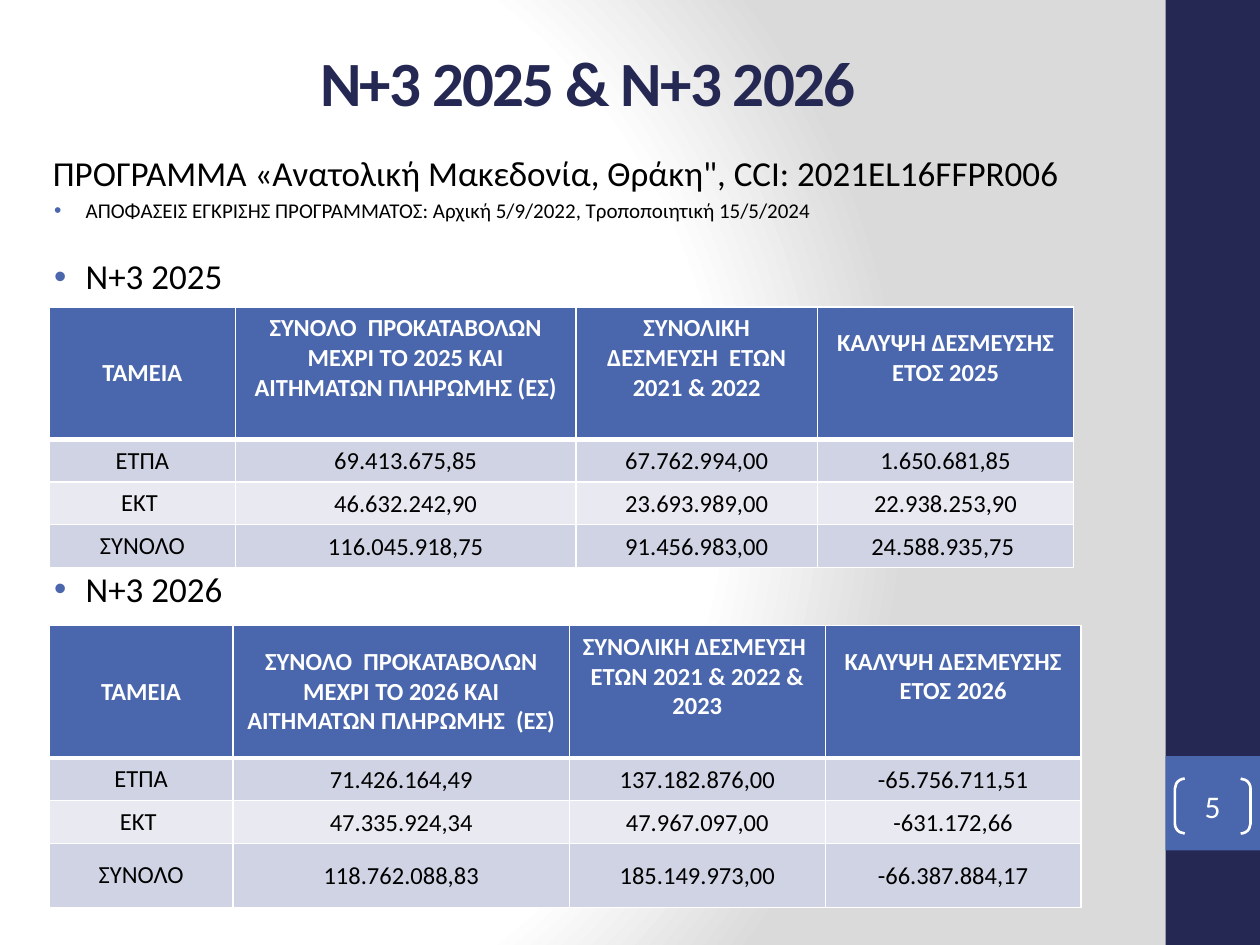
import dataclasses

import pptx
import pptx.dml.color
import pptx.enum.shapes
import pptx.enum.text
import pptx.oxml
import pptx.oxml.ns
import pptx.util

ALIGN = pptx.enum.text.PP_ALIGN
ANCHOR = pptx.enum.text.MSO_ANCHOR
SHAPE = pptx.enum.shapes.MSO_SHAPE
NS = pptx.oxml.ns.nsdecls("a", "p")


@dataclasses.dataclass(frozen=True)
class Theme:
    font: str = "Calibri"
    navy: str = "242852"
    blue: str = "4A66AC"
    band: str = "D0D3E3"
    pale: str = "E9EAF1"
    white: str = "FFFFFF"
    grey: str = "DADADA"
    black: str = "000000"
    title: int = 36
    lead: int = 20
    number: int = 18
    cell: int = 14
    note: int = 12


THEME = Theme()


@dataclasses.dataclass(frozen=True)
class Box:
    """A region in percent of the slide's width and height."""
    left: float
    top: float
    width: float
    height: float

    def lengths(self):
        return [pptx.util.Inches(share * side / 100) for share, side in
                ((self.left, 10), (self.top, 7.5), (self.width, 10), (self.height, 7.5))]

    def inner(self, left, top, width, height):
        """A box inside this one, in shares of its sides."""
        return Box(self.left + left * self.width, self.top + top * self.height,
                   width * self.width, height * self.height)


def rgb(color):
    return pptx.dml.color.RGBColor.from_string(color)


def write(para, text, size, color=THEME.black, bold=False, align=None, spacing=None):
    para.alignment = align
    span = para.add_run()
    span.text = text
    font = span.font
    font.name, font.size, font.bold = THEME.font, pptx.util.Pt(size), bold
    font.color.rgb = rgb(color)
    if spacing is not None:
        span._r.get_or_add_rPr().set("spc", str(spacing * 100))


def place(shape, box):
    shape.left, shape.top, shape.width, shape.height = box.lengths()


def set_background(page):
    stops = "".join(
        f'<a:gs pos="{pos}000"><a:srgbClr val="{color}"/></a:gs>'
        for pos, color in ((0, THEME.white), (75, THEME.white), (100, THEME.grey)))
    page._element.cSld.insert(0, pptx.oxml.parse_xml(
        f'<p:bg {NS}><p:bgPr><a:gradFill rotWithShape="1"><a:gsLst>{stops}</a:gsLst>'
        '<a:path path="circle"><a:fillToRect l="20000" t="50000" r="100000" b="50000"/>'
        '</a:path></a:gradFill><a:effectLst/></p:bgPr></p:bg>'))


def add_block(page, box, color):
    block = page.shapes.add_shape(SHAPE.RECTANGLE, *box.lengths())
    block.shadow.inherit = False
    block.fill.solid()
    block.fill.fore_color.rgb = rgb(color)
    block.line.fill.background()


def add_side_bar(page, box, number):
    add_block(page, box, THEME.navy)
    tile = box.inner(0, 0.8, 1, 0.1)
    add_block(page, tile, THEME.blue)
    # Page number between brackets
    bracket = page.shapes.add_shape(
        SHAPE.DOUBLE_BRACKET, *tile.inner(0.1, 0.24, 0.8, 0.58).lengths())
    bracket.adjustments[0] = 0.18
    bracket.shadow.inherit = False
    bracket.fill.background()
    bracket.line.color.rgb = rgb(THEME.white)
    bracket.line.width = pptx.util.Pt(1.5)
    frame = bracket.text_frame
    frame.margin_left = frame.margin_right = frame.margin_top = frame.margin_bottom = 0
    frame.vertical_anchor = ANCHOR.MIDDLE
    write(frame.paragraphs[0], number, THEME.number, THEME.white, align=ALIGN.CENTER)


def fill_title(title, box, text):
    place(title, box)
    frame = title.text_frame
    frame.auto_size = pptx.enum.text.MSO_AUTO_SIZE.NONE
    frame.vertical_anchor = ANCHOR.MIDDLE
    write(frame.paragraphs[0], text, THEME.title, THEME.navy, bold=True,
          align=ALIGN.CENTER, spacing=-1)


def fill_body(body, box, lines):
    """Each line is text, size, space before in points, and whether it has a bullet."""
    place(body, box)
    frame = body.text_frame
    frame.auto_size = pptx.enum.text.MSO_AUTO_SIZE.NONE
    for index, (text, size, before, bullet) in enumerate(lines):
        para = frame.add_paragraph() if index else frame.paragraphs[0]
        write(para, text, size)
        para.space_before = pptx.util.Pt(before)
        props = para._p.get_or_add_pPr()
        props.set("marL", str(pptx.util.Inches(0.38 if bullet else 0.12)))
        props.set("indent", str(pptx.util.Inches(-0.25 if bullet else 0)))
        marks = ([f'<a:buClr {NS}><a:srgbClr val="{THEME.blue}"/></a:buClr>',
                  f'<a:buFont {NS} typeface="Arial"/>', f'<a:buChar {NS} char="•"/>']
                 if bullet else [f'<a:buNone {NS}/>'])
        for mark in marks:
            props.append(pptx.oxml.parse_xml(mark))


def format_cell(cell, text, row, column, raised):
    header = row == 0
    cell.vertical_anchor = ANCHOR.MIDDLE
    if not header and column:
        cell.margin_left = cell.margin_right = cell.margin_top = pptx.util.Inches(0.01)
        cell.margin_bottom = 0
    if header and column in raised:
        cell.margin_bottom = pptx.util.Inches(0.29)
    write(cell.text_frame.paragraphs[0], text, THEME.cell,
          THEME.white if header else THEME.black, bold=header, align=ALIGN.CENTER)
    cell.fill.solid()
    cell.fill.fore_color.rgb = rgb(
        THEME.blue if header else THEME.band if row % 2 else THEME.pale)
    # White borders, heavier under the header
    widths = {"L": 1, "R": 1, "T": 3 if row == 1 else 1, "B": 3 if header else 1}
    for index, (side, width) in enumerate(widths.items()):
        cell._tc.get_or_add_tcPr().insert(index, pptx.oxml.parse_xml(
            f'<a:ln{side} {NS} w="{pptx.util.Pt(width)}"><a:solidFill>'
            f'<a:srgbClr val="{THEME.white}"/></a:solidFill></a:ln{side}>'))


def add_fund_table(page, box, rows, columns, heights, raised):
    """Columns and heights are weights; raised header cells sit above the middle."""
    frame = page.shapes.add_table(len(rows), len(columns), *box.lengths())
    table = frame.table
    width, height = frame.width, frame.height
    for column, weight in zip(table.columns, columns):
        column.width = int(width * weight / sum(columns))
    for row, weight in zip(table.rows, heights):
        row.height = int(height * weight / sum(heights))
    for r, texts in enumerate(rows):
        for c, text in enumerate(texts):
            format_cell(table.cell(r, c), text, r, c, raised)


ROWS_2025 = [
    ["ΤΑΜΕΙΑ", "ΣΥΝΟΛΟ  ΠΡΟΚΑΤΑΒΟΛΩΝ ΜΕΧΡΙ ΤΟ 2025 ΚΑΙ ΑΙΤΗΜΑΤΩΝ ΠΛΗΡΩΜΗΣ (ΕΣ)",
     "ΣΥΝΟΛΙΚΗ ΔΕΣΜΕΥΣΗ  ΕΤΩΝ 2021 & 2022", "ΚΑΛΥΨΗ ΔΕΣΜΕΥΣΗΣ ΕΤΟΣ 2025"],
    ["ΕΤΠΑ", "69.413.675,85", "67.762.994,00", "1.650.681,85"],
    ["ΕΚΤ ", "46.632.242,90", "23.693.989,00", "22.938.253,90"],
    ["ΣΥΝΟΛΟ", "116.045.918,75", "91.456.983,00", "24.588.935,75 "],
]
ROWS_2026 = [
    ["ΤΑΜΕΙΑ", "ΣΥΝΟΛΟ  ΠΡΟΚΑΤΑΒΟΛΩΝ ΜΕΧΡΙ ΤΟ 2026 ΚΑΙ ΑΙΤΗΜΑΤΩΝ ΠΛΗΡΩΜΗΣ  (ΕΣ)",
     "ΣΥΝΟΛΙΚΗ ΔΕΣΜΕΥΣΗ  ΕΤΩΝ 2021 & 2022 & 2023", "ΚΑΛΥΨΗ ΔΕΣΜΕΥΣΗΣ ΕΤΟΣ 2026"],
    ["ΕΤΠΑ", "71.426.164,49", "137.182.876,00", "-65.756.711,51"],
    ["ΕΚΤ ", "47.335.924,34", "47.967.097,00", "-631.172,66"],
    ["ΣΥΝΟΛΟ", "118.762.088,83", "185.149.973,00", "-66.387.884,17"],
]
LINES = [
    ('ΠΡΟΓΡΑΜΜΑ «Ανατολική Μακεδονία, Θράκη", CCI: 2021EL16FFPR006', THEME.lead, 4, False),
    ("ΑΠΟΦΑΣΕΙΣ EΓΚΡΙΣΗΣ ΠΡΟΓΡΑΜΜΑΤΟΣ: Αρχική 5/9/2022, Τροποποιητική 15/5/2024",
     THEME.note, 2.4, True),
    ("Ν+3 2025", THEME.lead, 18.5, True),
    ("Ν+3 2026", THEME.lead, 154.5, True),
]


def main():
    deck = pptx.Presentation()
    deck.slide_width, deck.slide_height = pptx.util.Inches(10), pptx.util.Inches(7.5)
    page = deck.slides.add_slide(deck.slide_layouts[1])
    set_background(page)
    add_side_bar(page, Box(92.5, 0, 7.5, 100), "5")
    fill_title(page.shapes.title, Box(5, 4, 83.3, 9.2), "N+3 2025 & N+3 2026")
    fill_body(page.placeholders[1], Box(2, 15.33, 85.3, 82.8), LINES)
    add_fund_table(page, Box(3.9, 32.5, 81.3, 27.5), ROWS_2025,
                   (1.48, 2.7, 1.92, 2.03), (1.05, 0.34, 0.34, 0.34), raised=(1, 2, 3))
    add_fund_table(page, Box(3.9, 66.2, 81.9, 29.7), ROWS_2026,
                   (1.46, 2.67, 2.03, 2.03), (1.04, 0.34, 0.34, 0.51), raised=(2, 3))
    deck.save("out.pptx")


if __name__ == "__main__":
    main()
